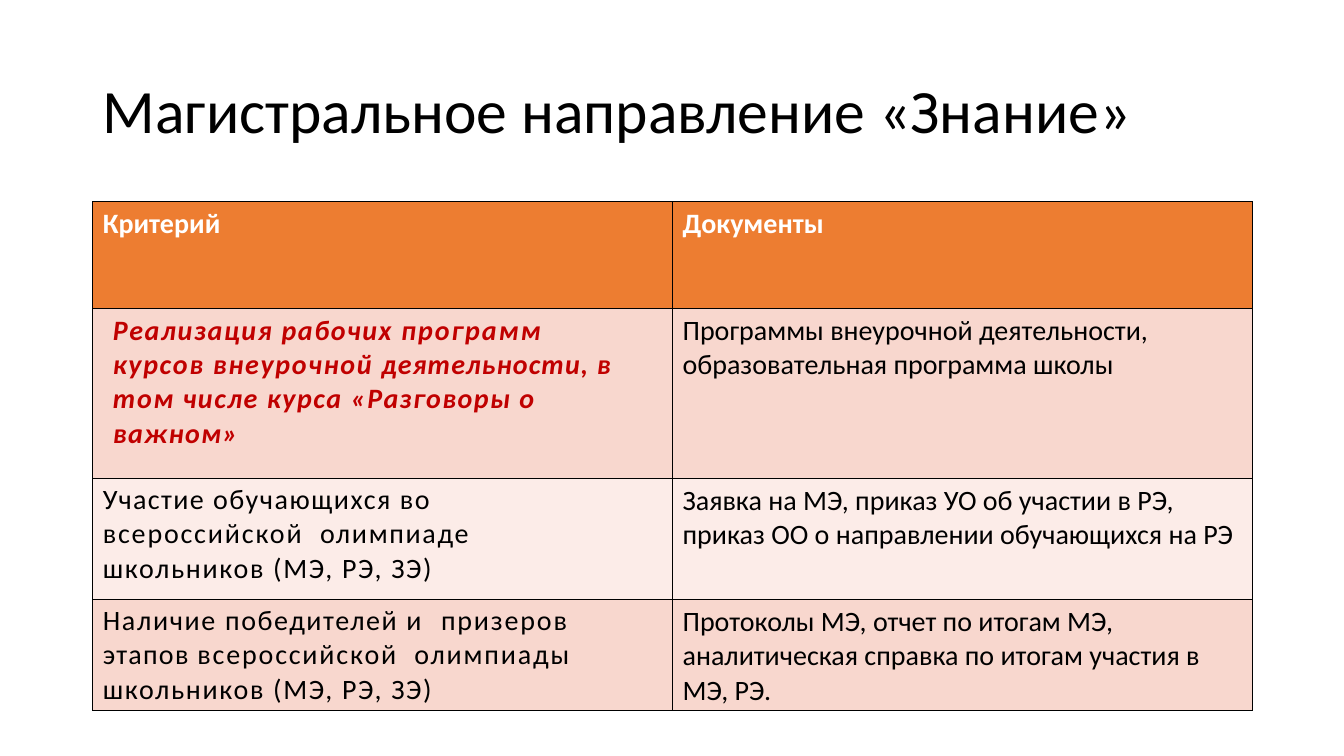
from dataclasses import dataclass

from lxml.etree import SubElement
from pptx import Presentation
from pptx.dml.color import RGBColor
from pptx.enum.text import MSO_ANCHOR
from pptx.oxml.ns import qn
from pptx.slide import Slide
from pptx.table import Table, _Cell
from pptx.text.text import Font
from pptx.util import Inches, Pt

FONT = "Calibri"
BLACK, WHITE, RED = "000000", "FFFFFF", "C00000"
ORANGE, PINK, PALE_PINK = "ED7D31", "F8D7CE", "FCECE8"


@dataclass(frozen=True)
class Span:
    text: str
    spacing: float = 0


@dataclass(frozen=True)
class Entry:
    spans: tuple[Span, ...]
    color: str = BLACK
    bold: bool = False
    italic: bool = False
    indent: float = 0
    space_before: float = 0
    left: float = 0.1
    top: float = 0.05
    right: float = 0.1


@dataclass(frozen=True)
class TableRow:
    height: float
    fill: str
    criterion: Entry
    documents: Entry


def heading(text: str) -> Entry:
    return Entry((Span(text),), color=WHITE, bold=True)


def documents(text: str) -> Entry:
    return Entry((Span(text),))


def criterion(space_before: float, *spans: Span) -> Entry:
    return Entry(spans, indent=0.1, space_before=space_before, left=0, top=0.04, right=0.5)


ROWS = (
    TableRow(1.06, ORANGE, heading("Критерий"), heading("Документы")),
    TableRow(
        1.69,
        PINK,
        Entry(
            (
                Span("Реализация ", 1.2),
                Span("рабочих ", 1.1),
                Span("программ ", 1.4),
                Span("курсов внеурочной ", 1.2),
                Span("деятельности, ", 0.8),
                Span("в том числе курса ", 1.1),
                Span("«Разговоры ", 1),
                Span("о ", 1.1),
                Span("важном»", 0.9),
            ),
            color=RED,
            bold=True,
            italic=True,
            indent=0.1,
            space_before=3.2,
            right=0.5,
        ),
        documents("Программы внеурочной деятельности, образовательная программа школы"),
    ),
    TableRow(
        1.2,
        PALE_PINK,
        criterion(
            3,
            Span("Участие ", 1),
            Span("обучающихся во ", 1.1),
            Span("всероссийской  ", 1.3),
            Span("олимпиаде школьников (МЭ, РЭ, ЗЭ)", 1.2),
        ),
        documents(
            "Заявка на МЭ, приказ УО об участии в РЭ, "
            "приказ ОО о направлении обучающихся на РЭ"
        ),
    ),
    TableRow(
        1.07,
        PINK,
        criterion(
            3.2,
            Span("Наличие ", 1.2),
            Span("победителей ", 1.1),
            Span("и  ", 1.6),
            Span("призеров ", 1.3),
            Span("этапов ", 0.9),
            Span("всероссийской  олимпиады ", 1.3),
            Span("школьников (МЭ, РЭ, ЗЭ)", 1.2),
        ),
        documents(
            "Протоколы МЭ, отчет по итогам МЭ, "
            "аналитическая справка по итогам участия в МЭ, РЭ."
        ),
    ),
)


def rgb(color: str) -> RGBColor:
    return RGBColor.from_string(color)


def style_font(font: Font, size: float, color: str) -> None:
    font.name = FONT
    font.size = Pt(size)
    font.color.rgb = rgb(color)


def add_borders(cell: _Cell) -> None:
    properties = cell._tc.get_or_add_tcPr()
    for side in ("lnL", "lnR", "lnT", "lnB"):
        line = SubElement(properties, qn(f"a:{side}"), w=str(Pt(1)))
        solid = SubElement(line, qn("a:solidFill"))
        SubElement(solid, qn("a:srgbClr"), val=BLACK)


def fill_cell(cell: _Cell, entry: Entry, fill: str) -> None:
    add_borders(cell)
    cell.fill.solid()
    cell.fill.fore_color.rgb = rgb(fill)
    cell.margin_left = Inches(entry.left)
    cell.margin_top = Inches(entry.top)
    cell.margin_right = Inches(entry.right)
    cell.margin_bottom = Inches(entry.top if entry.left else 0)
    para = cell.text_frame.paragraphs[0]
    style_font(para.font, 20, entry.color)
    para.font.bold = entry.bold
    para.font.italic = entry.italic
    para.space_before = Pt(entry.space_before)
    para._p.get_or_add_pPr().set("marL", str(Inches(entry.indent)))
    for span in entry.spans:
        run = para.add_run()
        run.text = span.text
        if span.spacing:
            run._r.get_or_add_rPr().set("spc", str(round(span.spacing * 100)))


def add_title(page: Slide, text: str) -> None:
    box = page.shapes.add_textbox(Inches(0.92), Inches(0.4), Inches(11.5), Inches(1.45))
    frame = box.text_frame
    frame.word_wrap = True
    frame.vertical_anchor = MSO_ANCHOR.MIDDLE
    para = frame.paragraphs[0]
    para.text = text
    para.line_spacing = 0.9
    style_font(para.font, 44, BLACK)


def add_criteria_table(page: Slide) -> None:
    height = sum(row.height for row in ROWS)
    table: Table = page.shapes.add_table(
        len(ROWS), 2, Inches(0.92), Inches(2), Inches(11.5), Inches(height)
    ).table
    table.first_row = False
    table.horz_banding = False
    for index, row in enumerate(ROWS):
        table.rows[index].height = Inches(row.height)
        for column, entry in enumerate((row.criterion, row.documents)):
            fill_cell(table.cell(index, column), entry, row.fill)


def main() -> None:
    deck = Presentation()
    deck.slide_width = Inches(13.33)
    deck.slide_height = Inches(7.5)
    page = deck.slides.add_slide(deck.slide_layouts[6])
    add_title(page, "Магистральное направление «Знание»")
    add_criteria_table(page)
    deck.save("out.pptx")


if __name__ == "__main__":
    main()
